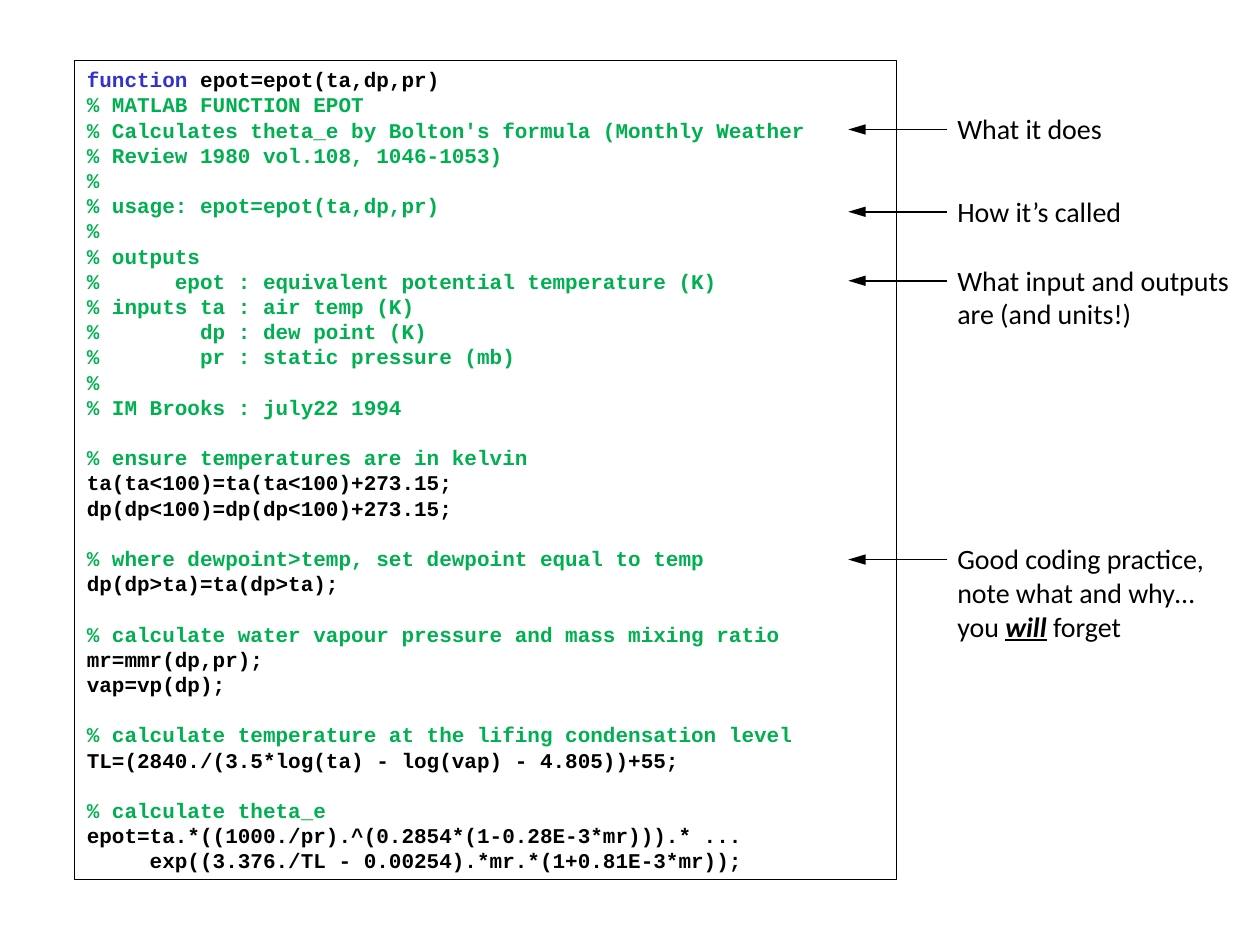
from dataclasses import dataclass

from lxml import etree
from pptx import Presentation
from pptx import util as u
from pptx.dml.color import RGBColor
from pptx.enum import shapes, text
from pptx.oxml.ns import qn


@dataclass(frozen=True)
class Theme:
    ink: RGBColor = RGBColor(0x00, 0x00, 0x00)
    paper: RGBColor = RGBColor(0xFF, 0xFF, 0xFF)
    keyword: RGBColor = RGBColor(0x33, 0x33, 0xCC)
    comment: RGBColor = RGBColor(0x00, 0xB0, 0x50)
    code_font: str = "Courier New"
    note_font: str = "Calibri"
    code_size: u.Pt = u.Pt(12)
    code_pitch: u.Pt = u.Pt(14.4)
    note_size: u.Pt = u.Pt(16)


THEME = Theme()
KEYWORD = "function "

# Blocks of code lines, set apart by one line of space
CODE_BLOCKS = [
    [
        "function epot=epot(ta,dp,pr)",
        "% MATLAB FUNCTION EPOT",
        "% Calculates theta_e by Bolton's formula (Monthly Weather",
        "% Review 1980 vol.108, 1046-1053)",
        "%",
        "% usage: epot=epot(ta,dp,pr)",
        "%",
        "% outputs",
        "%      epot : equivalent potential temperature (K)",
        "% inputs ta : air temp (K)",
        "%        dp : dew point (K)",
        "%        pr : static pressure (mb)",
        "%",
        "% IM Brooks : july22 1994",
    ],
    [
        "% ensure temperatures are in kelvin",
        "ta(ta<100)=ta(ta<100)+273.15;",
        "dp(dp<100)=dp(dp<100)+273.15;",
    ],
    [
        "% where dewpoint>temp, set dewpoint equal to temp",
        "dp(dp>ta)=ta(dp>ta);",
    ],
    [
        "% calculate water vapour pressure and mass mixing ratio",
        "mr=mmr(dp,pr);",
        "vap=vp(dp);",
    ],
    [
        "% calculate temperature at the lifing condensation level",
        "TL=(2840./(3.5*log(ta) - log(vap) - 4.805))+55;",
    ],
    [
        "% calculate theta_e",
        "epot=ta.*((1000./pr).^(0.2854*(1-0.28E-3*mr))).* ...",
        "     exp((3.376./TL - 0.00254).*mr.*(1+0.81E-3*mr));",
    ],
]

# Arrow height, note width and height in cm, whether it wraps, text, stressed word
NOTES = [
    (2.61, 3.66, 0.94, False, "What it does", None),
    (4.27, 4.11, 0.94, False, "How it’s called", None),
    (5.66, 6.05, 2.29, True, "What input and outputs are (and units!)", None),
    (11.28, 5.84, 2.97, True,
     "Good coding practice, note what and why…you will forget", "will"),
]


def style_run(run, font, size, color, bold=False):
    run.font.name = font
    run.font.size = size
    run.font.color.rgb = color
    run.font.bold = bold


def split_line(line):
    """Return the (text, colour) parts of one line of code."""
    if line.startswith("%"):
        return [(line, THEME.comment)]
    if line.startswith(KEYWORD):
        return [(KEYWORD, THEME.keyword), (line[len(KEYWORD):], THEME.ink)]
    return [(line, THEME.ink)]


def add_listing(slide):
    panel = slide.shapes.add_shape(
        shapes.MSO_SHAPE.RECTANGLE, u.Cm(1.5), u.Cm(1.22), u.Cm(16.58), u.Cm(16.51))
    panel.shadow.inherit = False
    panel.fill.solid()
    panel.fill.fore_color.rgb = THEME.paper
    panel.line.color.rgb = THEME.ink
    panel.line.width = u.Pt(0.75)
    frame = panel.text_frame
    frame.word_wrap = True
    frame.vertical_anchor = text.MSO_ANCHOR.TOP
    for block_index, block in enumerate(CODE_BLOCKS):
        for line_index, line in enumerate(block):
            first = block_index == line_index == 0
            paragraph = frame.paragraphs[0] if first else frame.add_paragraph()
            paragraph.alignment = text.PP_ALIGN.LEFT
            paragraph.line_spacing = THEME.code_pitch
            if block_index and line_index == 0:
                paragraph.space_before = THEME.code_pitch
            for part, color in split_line(line):
                run = paragraph.add_run()
                run.text = part
                style_run(run, THEME.code_font, THEME.code_size, color, bold=True)


def add_arrow(slide, y):
    arrow = slide.shapes.add_connector(
        shapes.MSO_CONNECTOR.STRAIGHT, u.Cm(19.1), u.Cm(y), u.Cm(17.1), u.Cm(y))
    arrow.line.color.rgb = THEME.ink
    arrow.line.width = u.Pt(1)
    line = arrow.line._get_or_add_ln()
    etree.SubElement(line, qn("a:tailEnd"), type="triangle", w="med", len="lg")
    etree.SubElement(arrow._element.spPr, qn("a:effectLst"))


def add_note(slide, y, width, height, wraps, wording, stressed):
    """Place a note whose first line is level with the arrow at y."""
    note = slide.shapes.add_textbox(
        u.Cm(19.05), u.Cm(y - 0.48), u.Cm(width), u.Cm(height))
    note.text_frame.word_wrap = wraps
    paragraph = note.text_frame.paragraphs[0]
    before, word, after = wording.partition(stressed) if stressed else (wording, "", "")
    for part in filter(None, (before, word, after)):
        run = paragraph.add_run()
        run.text = part
        style_run(run, THEME.note_font, THEME.note_size, THEME.ink)
        if part == stressed:
            run.font.bold = run.font.italic = run.font.underline = True


def main():
    deck = Presentation()
    deck.slide_width, deck.slide_height = u.Cm(25.4), u.Cm(19.05)
    slide = deck.slides.add_slide(deck.slide_layouts[6])
    add_listing(slide)
    for y, *note in NOTES:
        add_arrow(slide, y)
        add_note(slide, y, *note)
    deck.save("out.pptx")


if __name__ == "__main__":
    main()
